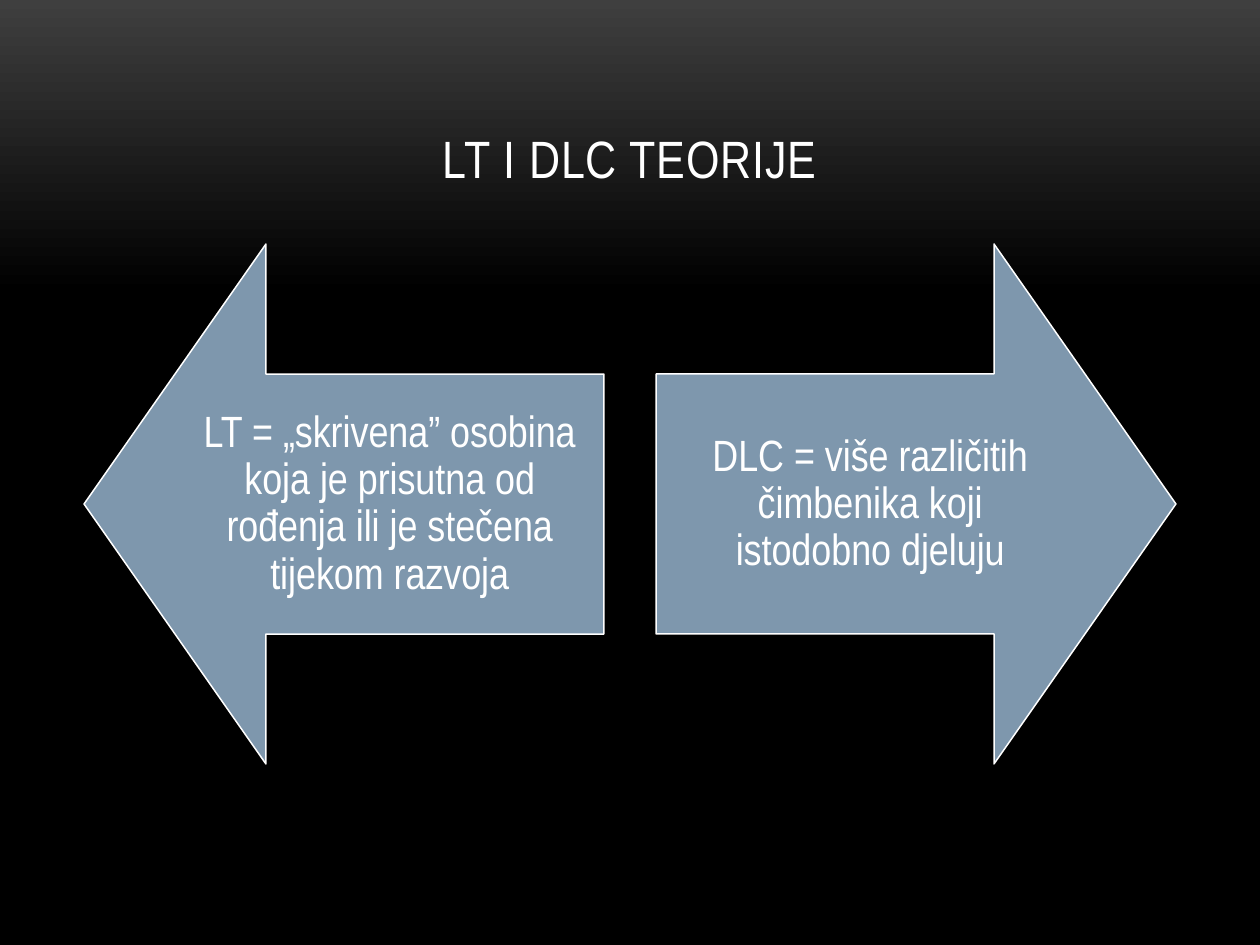
import copy
import pptx
import pptx.util
import pptx.dml.color
import pptx.enum.shapes
import pptx.enum.text
import pptx.oxml.ns

WHITE = pptx.dml.color.RGBColor(0xFF, 0xFF, 0xFF)
BLUE = pptx.dml.color.RGBColor(0x7E, 0x97, 0xAD)
GRAY = pptx.dml.color.RGBColor(0x3F, 0x3F, 0x3F)
BLACK = pptx.dml.color.RGBColor(0x00, 0x00, 0x00)

COLS, ROWS = 15, 24
SIDE = 6.19
BODY = 5.1


class Deck:
    font = "Arial Narrow"

    def __init__(self):
        self.show = pptx.Presentation()
        self.show.slide_width = pptx.util.Inches(10)
        self.show.slide_height = pptx.util.Inches(7.5)
        self.slide = self.show.slides.add_slide(self.show.slide_layouts[5])

    def place(self, col, row, wide, high):
        unit = self.show.slide_width / COLS
        step = self.show.slide_height / ROWS
        return [round(n) for n in (col * unit, row * step, wide * unit, high * step)]

    def back(self):
        fill = self.slide.background.fill
        fill.gradient()
        fill.gradient_angle = 270
        stops = next(self.slide.element.iter(pptx.oxml.ns.qn("a:gsLst")))
        stops.append(copy.deepcopy(stops[-1]))
        marks = [(0, GRAY), (0.31, BLACK), (1, BLACK)]
        for stop, (point, color) in zip(fill.gradient_stops, marks):
            stop.position = point
            stop.color.rgb = color

    def letter(self, frame, text, size, anchor):
        frame.text = text
        frame.word_wrap = True
        frame.auto_size = pptx.enum.text.MSO_AUTO_SIZE.NONE
        frame.vertical_anchor = anchor
        line = frame.paragraphs[0]
        line.alignment = pptx.enum.text.PP_ALIGN.CENTER
        run = line.runs[0]
        run.font.name = self.font
        run.font.size = pptx.util.Pt(size)
        run.font.color.rgb = WHITE
        return line

    def title(self, text, *spot):
        box = self.slide.shapes.title
        box.left, box.top, box.width, box.height = self.place(*spot)
        line = self.letter(box.text_frame, text, 30, pptx.enum.text.MSO_ANCHOR.BOTTOM)
        line.runs[0]._r.get_or_add_rPr().set("spc", "50")

    def arrow(self, turn, *spot):
        kind = pptx.enum.shapes.MSO_SHAPE.UP_ARROW
        shape = self.slide.shapes.add_shape(kind, *self.place(*spot))
        shape.rotation = turn
        shape.adjustments[0] = 0.5
        shape.adjustments[1] = 0.35
        shape.shadow.inherit = False
        shape.fill.solid()
        shape.fill.fore_color.rgb = BLUE
        shape.line.color.rgb = WHITE
        shape.line.width = pptx.util.Pt(0.85)

    def label(self, text, *spot):
        frame = self.slide.shapes.add_textbox(*self.place(*spot)).text_frame
        line = self.letter(frame, text, 25, pptx.enum.text.MSO_ANCHOR.MIDDLE)
        line.line_spacing = 0.9
        inset = pptx.util.Inches(0.19)
        frame.margin_left = frame.margin_right = inset
        frame.margin_top = frame.margin_bottom = inset


def main():
    deck = Deck()
    deck.back()
    deck.title("LT I DLC TEORIJE", 1, 0.96, 13, 4)
    right = COLS - 1 - SIDE
    sides = [
        (270, 1, 1 + SIDE - BODY,
         "LT = „skrivena” osobina koja je prisutna od rođenja ili je stečena tijekom razvoja"),
        (90, right, right,
         "DLC = više različitih čimbenika koji istodobno djeluju"),
    ]
    for turn, col, start, text in sides:
        deck.arrow(turn, col, 6.2, SIDE, 13.2)
        deck.label(text, start, 9.5, BODY, 6.6)
    deck.show.save("out.pptx")


if __name__ == "__main__":
    main()
